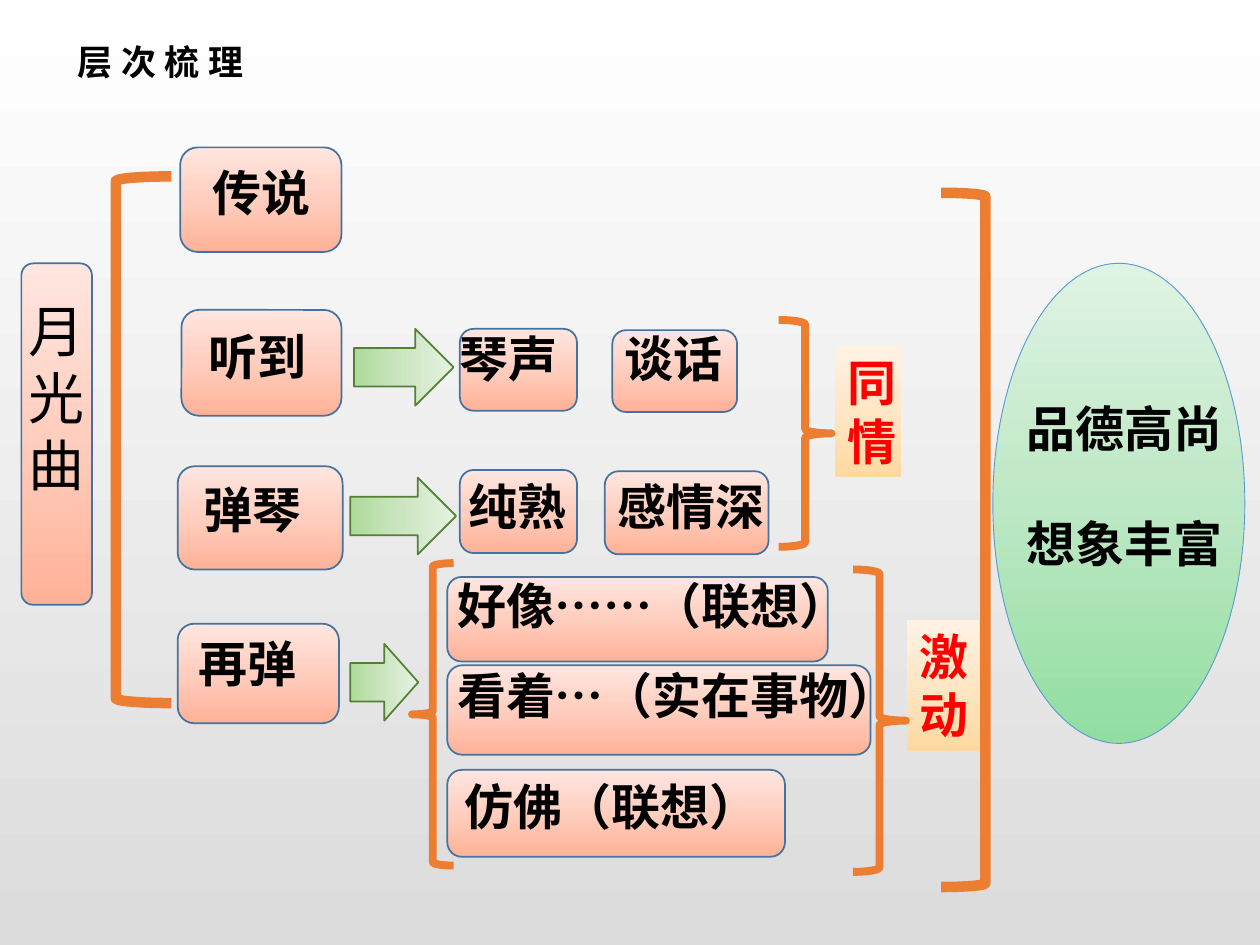
from copy import deepcopy

from pptx import Presentation
from pptx.dml.color import RGBColor
from pptx.enum.shapes import MSO_SHAPE
from pptx.enum.text import MSO_ANCHOR, MSO_AUTO_SIZE, PP_ALIGN
from pptx.util import Inches, Pt

FONT = "Noto Sans CJK SC"
BLACK = RGBColor(0x00, 0x00, 0x00)
WHITE = RGBColor(0xFF, 0xFF, 0xFF)
GREY = RGBColor(0xDC, 0xDC, 0xDC)
RED = RGBColor(0xFF, 0x00, 0x00)
ORANGE = RGBColor(0xED, 0x7D, 0x31)
CARD_LINE = RGBColor(0x43, 0x73, 0x9E)
ARROW_LINE = RGBColor(0x53, 0x80, 0x35)
OVAL_LINE = RGBColor(0x5B, 0x9B, 0xD5)
CARD_FILL = [RGBColor(0xFF, 0xB2, 0x97), RGBColor(0xFF, 0xCE, 0xBF), RGBColor(0xFF, 0xE6, 0xE0)]
ARROW_FILL = [RGBColor(0xAE, 0xDA, 0x9B), RGBColor(0xCD, 0xE6, 0xC2), RGBColor(0xE6, 0xF2, 0xE1)]
OVAL_FILL = [RGBColor(0x91, 0xDE, 0xA0), RGBColor(0xBD, 0xE8, 0xC5), RGBColor(0xDF, 0xF3, 0xE3)]
THEME_FILL = [RGBColor(0xFF, 0xD8, 0xA0), RGBColor(0xFF, 0xE6, 0xC5), RGBColor(0xFF, 0xF2, 0xE3)]

deck = Presentation()
deck.slide_width, deck.slide_height = Inches(10), Inches(7.5)
COLUMN = deck.slide_width / 100
ROW = deck.slide_height / 75
page = deck.slides.add_slide(deck.slide_layouts[5])
backdrop = page.background.fill
backdrop.gradient()
backdrop.gradient_angle = 270
for stop, color, position in zip(backdrop.gradient_stops, (WHITE, GREY), (0, 1)):
    stop.color.rgb = color
    stop.position = position


def draw(kind, place, colors=None, angle=90, line=None, weight=1, flip=False):
    left, top, width, height = place
    shape = page.shapes.add_shape(
        kind, round(left * COLUMN), round(top * ROW), round(width * COLUMN), round(height * ROW))
    shape.shadow.inherit = False
    if colors:
        shape.fill.gradient()
        shape.fill.gradient_angle = angle
        first = shape._element.spPr.xpath(".//a:gs")[0]
        first.addnext(deepcopy(first))
        for stop, color, position in zip(shape.fill.gradient_stops, colors, (0, 0.5, 1)):
            stop.color.rgb = color
            stop.position = position
    else:
        shape.fill.background()
    if line:
        shape.line.color.rgb = line
        shape.line.width = Pt(weight)
    else:
        shape.line.fill.background()
    if flip:
        shape._element.spPr.xfrm.set("flipH", "1")
    return shape


def write(shape, text, size=28, color=BLACK, bold=True, align=PP_ALIGN.LEFT):
    frame = shape.text_frame
    frame.text = text
    frame.word_wrap = True
    frame.auto_size = MSO_AUTO_SIZE.NONE
    frame.vertical_anchor = MSO_ANCHOR.TOP
    for para in frame.paragraphs:
        para.alignment = align
        for span in para.runs:
            span.font.name = FONT
            span.font.size = Pt(size)
            span.font.bold = bold
            span.font.color.rgb = color
            properties = span._r.get_or_add_rPr()
            east_asian = deepcopy(properties.find(properties.xpath("a:latin")[0].tag))
            east_asian.tag = east_asian.tag.replace("latin", "ea")
            properties.xpath("a:latin")[0].addnext(east_asian)


title = page.shapes.title
title.left, title.top = round(4.7 * COLUMN), round(2.7 * ROW)
title.width, title.height = round(16.1 * COLUMN), round(4.4 * ROW)
write(title, "层次梳理", size=20, align=PP_ALIGN.CENTER)
title.text_frame.word_wrap = False
title.text_frame.paragraphs[0].runs[0]._r.get_or_add_rPr().set("spc", "500")

for place in [(27.8, 51.1, 5.4, 6.1), (27.8, 37.9, 8.4, 6.1), (28.1, 26.1, 7.9, 6.1)]:
    draw(MSO_SHAPE.RIGHT_ARROW, place, ARROW_FILL, 0, ARROW_LINE)

draw(MSO_SHAPE.OVAL, (78.8, 20.9, 20, 38.1), OVAL_FILL, line=OVAL_LINE, weight=0.5)
draw(MSO_SHAPE.FLOWCHART_ALTERNATE_PROCESS, (1.7, 20.9, 5.6, 27.1), CARD_FILL, line=CARD_LINE)

cards = [
    (14.3, 11.7, 12.8, 8.3),
    (14.4, 24.6, 12.7, 8.4),
    (14.1, 37, 13.1, 8.2),
    (14.1, 49.5, 12.8, 7.9),
    (36.5, 26.1, 9.3, 6.5),
    (48.6, 26.2, 9.9, 6.5),
    (36.5, 37.3, 9.3, 6.6),
    (48, 37.4, 13, 6.6),
    (35.5, 45.8, 30.2, 6.7),
    (35.5, 52.8, 33.6, 7.1),
    (35.5, 61.1, 26.8, 6.9),
]
for place in cards:
    draw(MSO_SHAPE.FLOWCHART_ALTERNATE_PROCESS, place, CARD_FILL, line=CARD_LINE)

labels = [
    ("传说", 15.9, 12.4),
    ("听到", 15.6, 25.4),
    ("弹琴", 15.2, 37.6),
    ("再弹", 14.8, 49.8),
    ("琴声", 35.5, 25.6),
    ("谈话", 48.6, 25.6),
    ("纯熟", 36.2, 37.3),
    ("感情深", 48, 37.3),
    ("好像……（联想）", 35.3, 45.2),
    ("看着…（实在事物）", 35.3, 52.3),
    ("仿佛（联想）", 35.9, 61.1),
    ("品德高尚", 80.5, 31.1),
    ("想象丰富", 80.5, 40.3),
]
for text, left, top in labels:
    width = 3.9 * len(text) + 2.5
    box = page.shapes.add_textbox(
        round(left * COLUMN), round(top * ROW), round(width * COLUMN), round(5.7 * ROW))
    write(box, text)

topic = page.shapes.add_textbox(
    round(1.3 * COLUMN), round(23 * ROW), round(6.5 * COLUMN), round(17.2 * ROW))
write(topic, "月\n光\n曲", size=32, bold=False)

for text, place in [("同情", (66.3, 27.5, 5.2, 10.4)), ("激动", (72, 49.2, 5.7, 10.4))]:
    write(draw(MSO_SHAPE.RECTANGLE, place, THEME_FILL), text, color=RED)

for kind, place, weight, flip in [
    (MSO_SHAPE.LEFT_BRACKET, (9.2, 14, 4.4, 41.8), 6, False),
    (MSO_SHAPE.LEFT_BRACKET, (74.7, 15.3, 3.5, 55.1), 6, True),
    (MSO_SHAPE.LEFT_BRACE, (32.7, 44.7, 3.3, 24), 4.5, False),
    (MSO_SHAPE.LEFT_BRACE, (61.8, 25.4, 4.2, 18), 4.5, True),
    (MSO_SHAPE.LEFT_BRACE, (67.7, 45.2, 4.2, 24), 4.5, True),
]:
    draw(kind, place, line=ORANGE, weight=weight, flip=flip)

deck.save("out.pptx")
